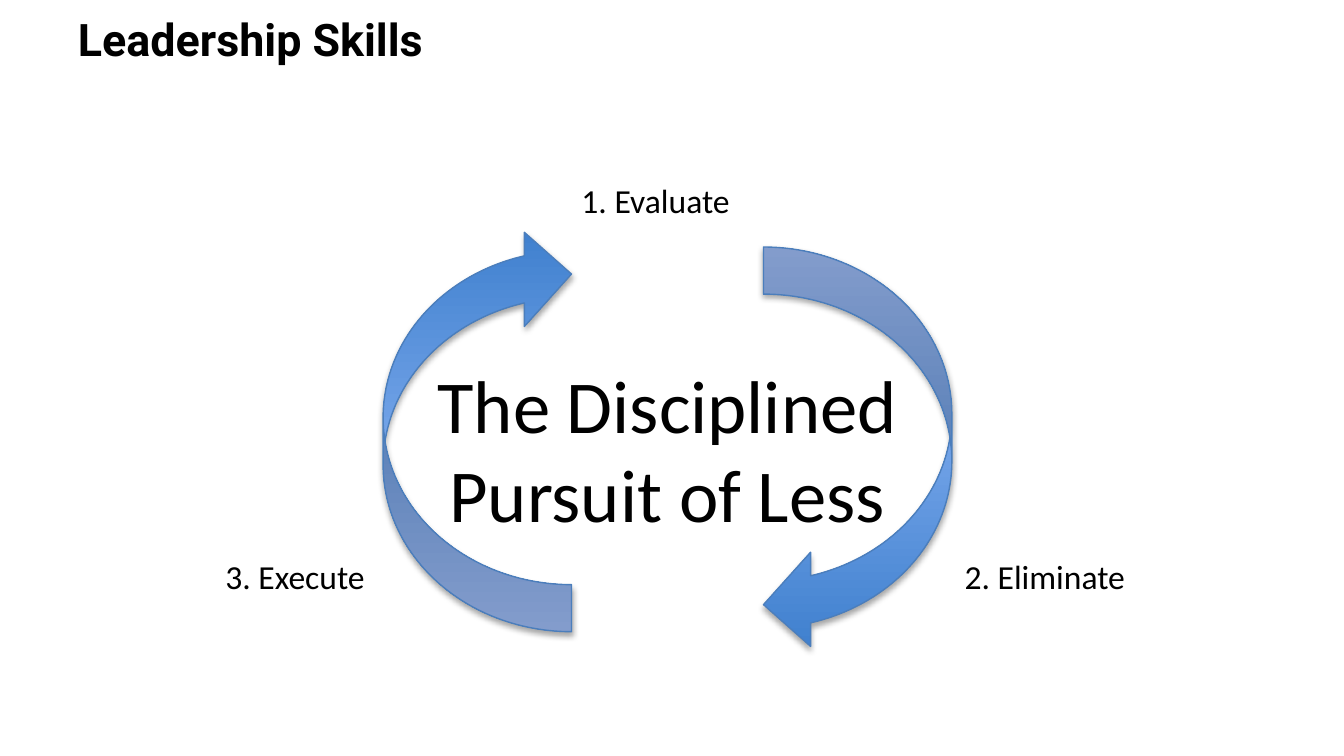
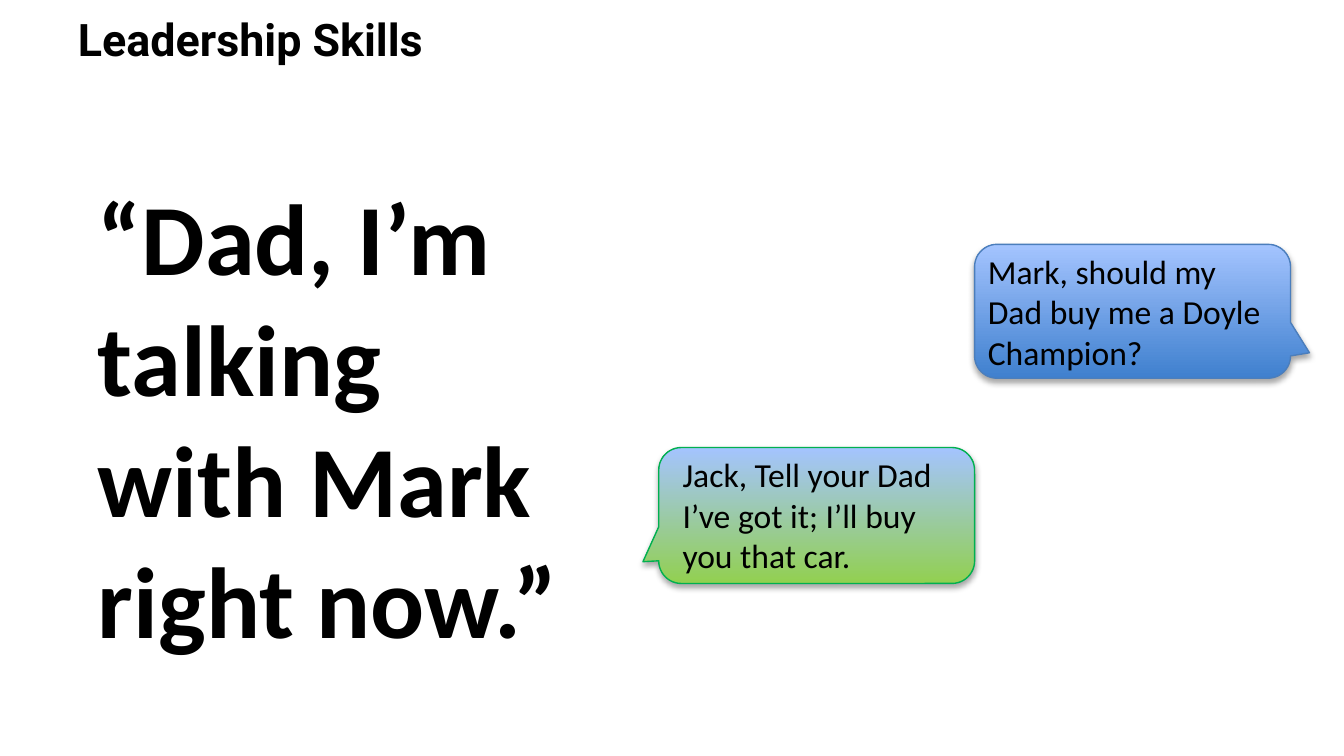
"""Build two Leadership Skills slides: a three-step cycle and a text-message exchange."""
from lxml import etree
from pptx import Presentation
from pptx import util as u
from pptx.dml.color import RGBColor
from pptx.enum import shapes, text
from pptx.oxml import ns

BLACK = RGBColor(0x00, 0x00, 0x00)
BLUE = RGBColor(0x3F, 0x80, 0xCE)
PALE_BLUE = RGBColor(0xA4, 0xC4, 0xFF)
BLUE_EDGE = RGBColor(0x4B, 0x7E, 0xBC)
GREEN = RGBColor(0x92, 0xD0, 0x50)
GREEN_EDGE = RGBColor(0x00, 0xB0, 0x50)

TITLE_FONT = {"name": "Roboto", "size": u.Pt(24), "bold": True}
LABEL_FONT = {"name": "Calibri", "size": u.Pt(18)}
CENTRE_FONT = {"name": "Calibri", "size": u.Pt(40)}
QUOTE_FONT = {"name": "Calibri", "size": u.Pt(54), "bold": True}


def write(box, words, font, align=text.PP_ALIGN.LEFT, wrap=True,
          fit=text.MSO_AUTO_SIZE.SHAPE_TO_FIT_TEXT):
    frame = box.text_frame
    frame.word_wrap = wrap
    frame.auto_size = fit
    para = frame.paragraphs[0]
    para.alignment = align
    span = para.add_run()
    span.text = words
    span.font.color.rgb = BLACK
    for name, value in font.items():
        setattr(span.font, name, value)


def add_shaded(page, kind, place, colour, edge):
    shape = page.shapes.add_shape(kind, *map(u.Cm, place))
    shape.fill.gradient()
    shape.fill.gradient_angle = 90
    for stop, tone in zip(shape.fill.gradient_stops, (colour, PALE_BLUE)):
        stop.color.rgb = tone
    shape.line.color.rgb = edge
    shape.line.width = u.Pt(0.75)
    shape.shadow.inherit = False
    effects = shape.element.spPr.find(ns.qn("a:effectLst"))
    shadow = etree.SubElement(effects, ns.qn("a:outerShdw"), blurRad="40000",
                              dist="23000", dir="5400000", rotWithShape="0")
    tint = etree.SubElement(shadow, ns.qn("a:srgbClr"), val=str(BLACK))
    etree.SubElement(tint, ns.qn("a:alpha"), val="35000")
    return shape


deck = Presentation()
deck.slide_width = u.Cm(25.4)
deck.slide_height = u.Cm(14.29)

pages = [deck.slides.add_slide(deck.slide_layouts[5]) for _ in range(2)]
for page in pages:
    title = page.shapes.title
    title.left, title.top, title.width, title.height = map(u.Cm, (1.22, 0, 22.86, 1.47))
    title.text_frame.vertical_anchor = text.MSO_ANCHOR.MIDDLE
    write(title, "Leadership Skills", TITLE_FONT, fit=text.MSO_AUTO_SIZE.NONE)

cycle, messages = pages

centre = cycle.shapes.add_textbox(*map(u.Cm, (7.26, 6.65, 10.7, 3.68)))
write(centre, "The Disciplined Pursuit of Less", CENTRE_FONT, text.PP_ALIGN.CENTER)

for step, left, top, width in (
    ("1. Evaluate", 10.74, 3.28, 3.35),
    ("2. Eliminate", 17.98, 10.39, 3.58),
    ("3. Execute", 4.01, 10.39, 3.18),
):
    label = cycle.shapes.add_textbox(*map(u.Cm, (left, top, width, 1.02)))
    write(label, step, LABEL_FONT, wrap=False)

for left, top, turn in ((14.43, 4.67, 0), (7.24, 4.29, 180)):
    arrow = add_shaded(cycle, shapes.MSO_SHAPE.CURVED_LEFT_ARROW,
                       (left, top, 3.56, 7.65), BLUE, BLUE_EDGE)
    arrow.rotation = turn

quote = messages.shapes.add_textbox(*map(u.Cm, (1.6, 3.18, 9.6, 9.5)))
write(quote, "“Dad, I’m talking with Mark right now.”", QUOTE_FONT)

for words, place, inset, tail, colour, edge in (
    ("Mark, should my Dad buy me a Doyle Champion?",
     (18.42, 4.62, 5.97, 2.53), 0, (0.56, 0.31), BLUE, BLUE_EDGE),
    ("Jack, Tell your Dad I’ve got it; I’ll buy you that car.",
     (12.45, 8.46, 5.97, 2.57), 0.2, (-0.55, 0.34), GREEN, GREEN_EDGE),
):
    bubble = add_shaded(messages, shapes.MSO_SHAPE.ROUNDED_RECTANGULAR_CALLOUT,
                        place, colour, edge)
    bubble.adjustments[0], bubble.adjustments[1] = tail
    left, top, width, height = place
    message = messages.shapes.add_textbox(
        *map(u.Cm, (left + inset, top, width - 2 * inset, height)))
    write(message, words, LABEL_FONT)

deck.save("out.pptx")
